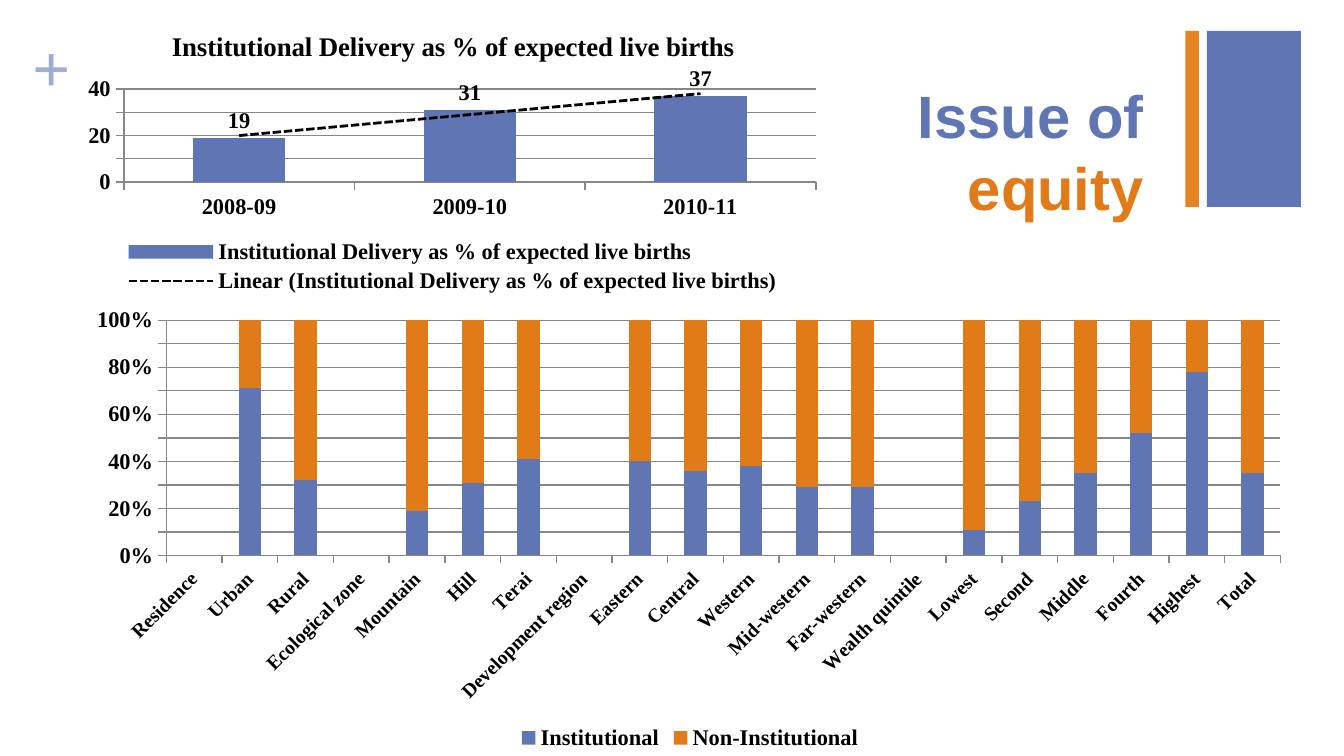
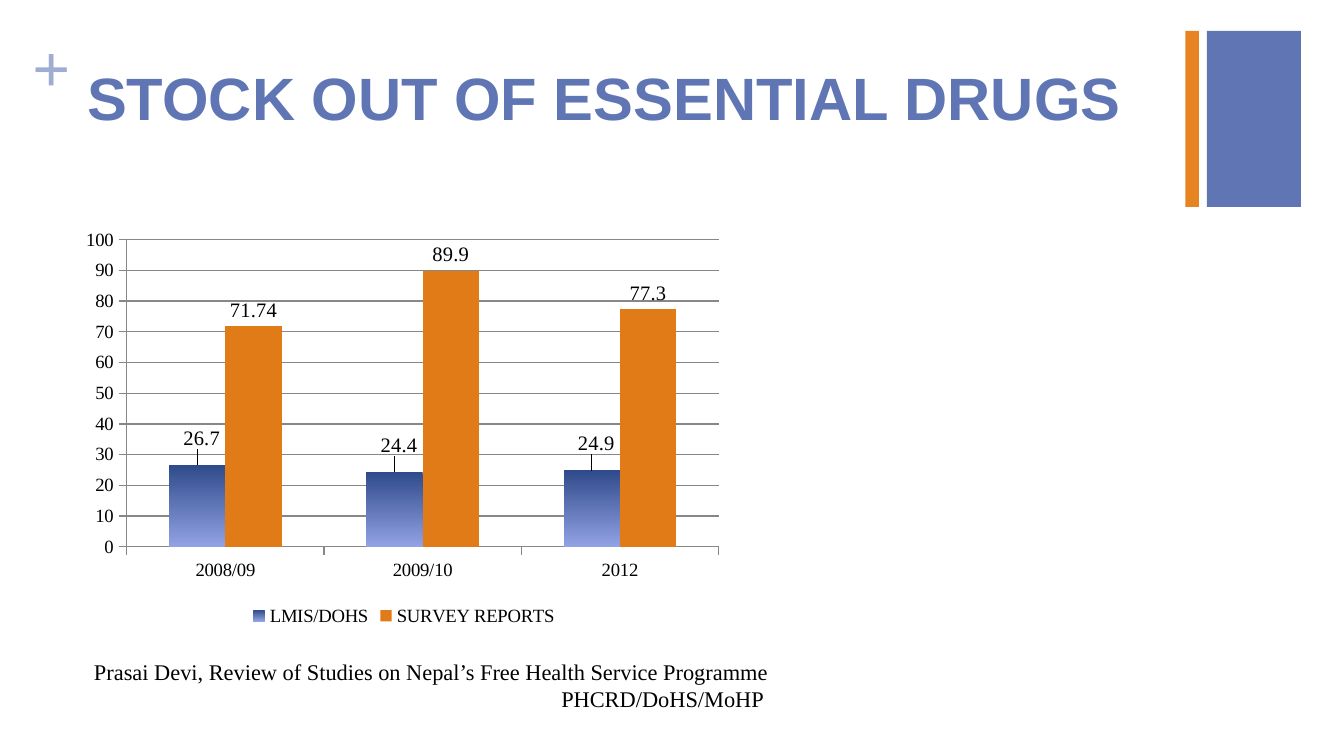
import pptx
import pptx.util
import pptx.chart.data
import pptx.dml.color
import pptx.enum.chart
import pptx.enum.shapes
import pptx.enum.text
import pptx.oxml
import pptx.oxml.ns

Inches, Pt = pptx.util.Inches, pptx.util.Pt
rgb = pptx.dml.color.RGBColor.from_string
XL = pptx.enum.chart
RIGHT = pptx.enum.text.PP_ALIGN.RIGHT
NS = pptx.oxml.ns.nsdecls("c", "a")
qn = pptx.oxml.ns.qn

BLUE, ORANGE, BAND_ORANGE = "6076B4", "E07B17", "E68422"
PALE_BLUE, BLACK, GREY = "A0ADD2", "000000", "878787"
SERIF, SANS = "Times New Roman", "Arial"


def add_text(slide, box, paragraphs, size, font=SERIF, color=BLACK, bold=False,
             align=None, inset=None, wrap=True):
    """Each paragraph is a list of runs, a run being text or (text, color)."""
    sp = slide.shapes.add_textbox(*[Inches(v) for v in box])
    tf = sp.text_frame
    tf.word_wrap = wrap
    if inset is not None:
        tf.margin_left = tf.margin_right = tf.margin_top = tf.margin_bottom = Inches(inset)
    for i, runs in enumerate(paragraphs):
        p = tf.add_paragraph() if i else tf.paragraphs[0]
        p.alignment = align
        for run in runs:
            words, run_color = (run, color) if isinstance(run, str) else run
            r = p.add_run()
            r.text = words
            r.font.name, r.font.size, r.font.bold = font, Pt(size), bold
            r.font.color.rgb = rgb(run_color)


def add_column_chart(slide, box, kind, cats, series, plot_box, size, unit, bold=False,
                     title=None, label_size=None, overlap=0):
    data = pptx.chart.data.CategoryChartData()
    data.categories = cats
    for name, values in series:
        data.add_series(name, values)
    chart = slide.shapes.add_chart(kind, *[Inches(v) for v in box], data).chart
    font = chart.font
    font.name, font.size, font.bold = SERIF, Pt(size), bold
    font.color.rgb = rgb(BLACK)

    # Title and legend
    chart.has_title = title is not None
    if title:
        chart.chart_title.include_in_layout = False
        p = chart.chart_title.text_frame.paragraphs[0]
        r = p.add_run()
        r.text = title
        r.font.name, r.font.size, r.font.bold = SERIF, Pt(14.4), True
        r.font.color.rgb = rgb(BLACK)
    chart.has_legend = True
    chart.legend.position = XL.XL_LEGEND_POSITION.BOTTOM
    chart.legend.include_in_layout = False

    # Axes
    for axis in (chart.category_axis, chart.value_axis):
        axis.major_tick_mark = XL.XL_TICK_MARK.OUTSIDE
        axis.minor_tick_mark = XL.XL_TICK_MARK.NONE
        axis.format.line.color.rgb = rgb(GREY)
        axis.format.line.width = Pt(0.75)
    chart.value_axis.major_unit = unit
    grid = chart.value_axis.major_gridlines.format.line
    grid.color.rgb = rgb(GREY)
    grid.width = Pt(0.75)

    # Columns and value labels
    plot = chart.plots[0]
    plot.gap_width, plot.overlap, plot.vary_by_categories = 150, overlap, False
    for s, color in zip(plot.series, (BLUE, ORANGE)):
        s.format.fill.solid()
        s.format.fill.fore_color.rgb = rgb(color)
        s.invert_if_negative = False
        if label_size:
            labels = s.data_labels
            labels.show_value = True
            labels.position = XL.XL_LABEL_POSITION.OUTSIDE_END
            labels.font.size, labels.font.bold = Pt(label_size), bold

    # Inner plot area as fractions of the chart
    area = plot._element.getparent()
    for old in area.findall(qn("c:layout")):
        area.remove(old)
    places = "".join(f'<c:{k} val="{v}"/>' for k, v in zip("xywh", plot_box))
    area.insert(0, pptx.oxml.parse_xml(
        f'<c:layout {NS}><c:manualLayout><c:layoutTarget val="inner"/>'
        f'<c:xMode val="edge"/><c:yMode val="edge"/>{places}</c:manualLayout></c:layout>'))
    return chart


prs = pptx.Presentation()
prs.slide_width, prs.slide_height = Inches(10), Inches(10 * 9 / 16)

# Shared decoration: two bands and the plus sign
slides = [prs.slides.add_slide(prs.slide_layouts[6]) for _ in range(2)]
for slide in slides:
    for left, width, color in ((8.98, 0.7, BLUE), (8.82, 0.1, BAND_ORANGE)):
        sp = slide.shapes.add_shape(pptx.enum.shapes.MSO_SHAPE.RECTANGLE, Inches(left),
                                    Inches(0.23), Inches(width), Inches(1.31))
        sp.shadow.inherit = False
        sp.fill.solid()
        sp.fill.fore_color.rgb = rgb(color)
        sp.line.fill.background()
    add_text(slide, (0.24, 0.19, 0.29, 0.61), [["+"]], 36, color=PALE_BLUE,
             bold=True, inset=0)
equity, drugs = slides
title_style = dict(size=32, font=SANS, color=BLUE, bold=True)

# Slide 1: issue of equity
add_text(equity, (6.37, 0.54, 2.24, 1.11), [["Issue of ", ("equity", ORANGE)]],
         align=RIGHT, **title_style)

delivery = "Institutional Delivery as % of expected live births"
chart = add_column_chart(
    equity, (0.55, 0.09, 5.64, 2.13), XL.XL_CHART_TYPE.COLUMN_CLUSTERED,
    ["2008-09", "2009-10", "2010-11"], [(delivery, [19, 31, 37])],
    (0.066, 0.269, 0.913, 0.325), 12, 10, bold=True, title=delivery, label_size=12)
ser = chart.plots[0].series[0]._element
ser.find(qn("c:cat")).addprevious(pptx.oxml.parse_xml(
    f'<c:trendline {NS}><c:spPr><a:ln w="19050"><a:solidFill><a:srgbClr val="{BLACK}"/>'
    '</a:solidFill><a:prstDash val="sysDash"/></a:ln></c:spPr>'
    '<c:trendlineType val="linear"/><c:dispRSqr val="0"/><c:dispEq val="0"/></c:trendline>'))

groups = ["Residence", "Urban", "Rural", "Ecological zone", "Mountain", "Hill", "Terai",
          "Development region", "Eastern", "Central", "Western", "Mid-western",
          "Far-western", "Wealth quintile", "Lowest", "Second", "Middle", "Fourth",
          "Highest", "Total"]
institutional = [None, 71, 32, None, 19, 31, 41, None, 40, 36, 38, 29, 29, None,
                 11, 23, 35, 52, 78, 35]
others = [None if v is None else 100 - v for v in institutional]
chart = add_column_chart(
    equity, (0.55, 2.22, 9.17, 3.4), XL.XL_CHART_TYPE.COLUMN_STACKED_100, groups,
    [("Institutional", institutional), ("Non-Institutional", others)],
    (0.075, 0.048, 0.904, 0.515), 12, 0.1, bold=True, overlap=100)
chart.value_axis.tick_labels.number_format = "0%"
chart.value_axis.tick_labels.number_format_is_linked = False
chart.category_axis.tick_labels.font.size = Pt(10.5)
chart.category_axis.tick_labels.font.bold = True
body = chart.category_axis._element.find(qn("c:txPr")).find(qn("a:bodyPr"))
body.set("rot", "-2700000")

# Slide 2: stock out of essential drugs
add_text(drugs, (0.55, 0.4, 8.26, 0.69), [["STOCK OUT OF ESSENTIAL DRUGS"]], **title_style)

chart = add_column_chart(
    drugs, (0.55, 1.65, 4.91, 3.05), XL.XL_CHART_TYPE.COLUMN_CLUSTERED,
    ["2008/09", "2009/10", "2012"],
    [("LMIS/DOHS", [26.7, 24.4, 24.9]), ("SURVEY REPORTS", [71.74, 89.9, 77.3])],
    (0.08, 0.044, 0.897, 0.749), 10, 10, label_size=11)
lmis = chart.plots[0].series[0]
fill = lmis.format.fill
fill.gradient()
fill.gradient_angle = 270
for stop, color in zip(fill.gradient_stops, ("2F4A8A", "92A2E4")):
    stop.color.rgb = rgb(color)

# Labels of the first series sit slightly up and to the right, without leader lines
for i in range(3):
    label = lmis.points[i].data_label
    label.font.size = Pt(11)
    label.position = XL.XL_LABEL_POSITION.OUTSIDE_END
labels = lmis._element.find(qn("c:dLbls"))
for idx in labels.findall(qn("c:dLbl") + "/" + qn("c:idx")):
    idx.addnext(pptx.oxml.parse_xml(
        f'<c:layout {NS}><c:manualLayout><c:x val="0.007"/><c:y val="-0.025"/>'
        '</c:manualLayout></c:layout>'))
for leader in labels.findall(qn("c:showLeaderLines")):
    labels.remove(leader)
labels.append(pptx.oxml.parse_xml(
    f'<c:extLst {NS}><c:ext uri="{{CE6537A1-D6FC-4f65-9D91-7224C49458BB}}" '
    'xmlns:c15="http://schemas.microsoft.com/office/drawing/2012/chart">'
    '<c15:showLeaderLines val="0"/></c:ext></c:extLst>'))

# Source line
add_text(drugs, (0.55, 4.85, 5.27, 0.5),
         [["Prasai Devi, Review of Studies on Nepal’s Free Health Service Programme"],
          ["PHCRD/DoHS/MoHP "]], 12, align=RIGHT, wrap=False)

prs.save("out.pptx")
